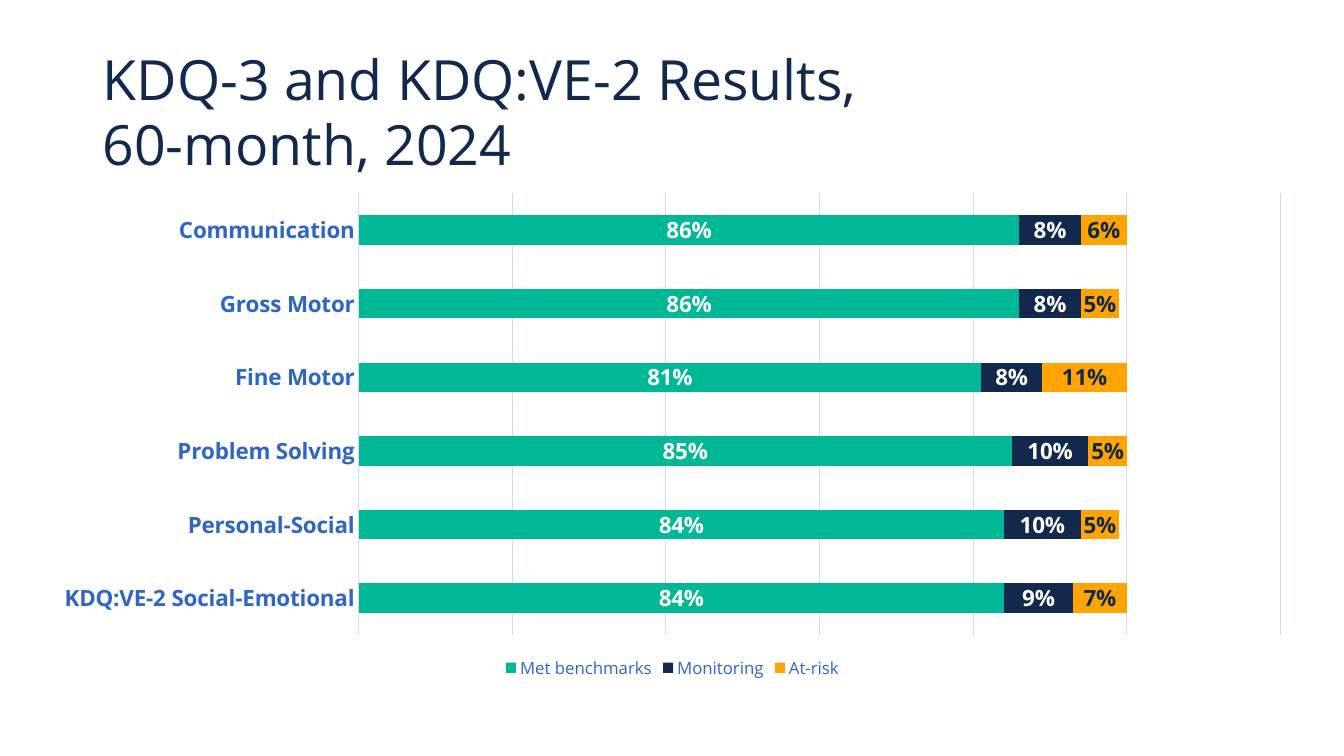
from pptx import Presentation
from pptx.chart import data
from pptx.dml.color import RGBColor
from pptx.enum import chart as ch, text
from pptx.util import Inches, Pt

NAVY = RGBColor(0x12, 0x28, 0x4C)
BLUE = RGBColor(0x2E, 0x66, 0xC2)
PALE = RGBColor(0xCD, 0xDB, 0xF3)
GREEN = RGBColor(0x00, 0xB7, 0x96)
ORANGE = RGBColor(0xFF, 0xA4, 0x00)
WHITE = RGBColor(0xFF, 0xFF, 0xFF)

AREAS = ["KDQ:VE-2 Social-Emotional", "Personal-Social", "Problem Solving",
         "Fine Motor", "Gross Motor", "Communication"]
RESULTS = [  # name, shares by area, bar colour, label colour
    ("Met benchmarks", (0.84, 0.84, 0.85, 0.81, 0.86, 0.86), GREEN, WHITE),
    ("Monitoring", (0.09, 0.10, 0.10, 0.08, 0.08, 0.08), NAVY, WHITE),
    ("At-risk", (0.07, 0.05, 0.05, 0.11, 0.05, 0.06), ORANGE, NAVY),
]


def set_font(font, size, color, bold=False):
    font.name = "Open Sans"
    font.size = Pt(size)
    font.bold = bold
    font.color.rgb = color


prs = Presentation()
prs.slide_width, prs.slide_height = Inches(13.33), Inches(7.5)
s = prs.slides.add_slide(prs.slide_layouts[6])

# Title
tf = s.shapes.add_textbox(Inches(0.92), Inches(0.4), Inches(11.5), Inches(1.45)).text_frame
tf.word_wrap = True
tf.vertical_anchor = text.MSO_ANCHOR.MIDDLE
p = tf.paragraphs[0]
p.line_spacing = 0.98
for i, line in enumerate(["KDQ-3 and KDQ:VE-2 Results, ", "60-month, 2024"]):
    if i:
        p.add_line_break()
    r = p.add_run()
    r.text = line
    set_font(r.font, 39.6, NAVY)

# Stacked bars
cd = data.CategoryChartData(number_format="0%")
cd.categories = AREAS
for name, shares, _, _ in RESULTS:
    cd.add_series(name, shares)
chart = s.shapes.add_chart(ch.XL_CHART_TYPE.BAR_STACKED, Inches(0.39), Inches(1.82),
                           Inches(12.56), Inches(4.96), cd).chart
chart.has_title = False
set_font(chart.font, 10, NAVY)

plot = chart.plots[0]
plot.gap_width, plot.overlap = 150, 100
plot.vary_by_categories = False
for series, (_, _, fill, label) in zip(plot.series, RESULTS):
    series.format.fill.solid()
    series.format.fill.fore_color.rgb = fill
    labels = series.data_labels
    labels.show_value = True
    labels.position = ch.XL_LABEL_POSITION.CENTER
    labels.number_format, labels.number_format_is_linked = "0%", False
    set_font(labels.font, 16, label, bold=True)

# Axes
areas, shares = chart.category_axis, chart.value_axis
areas.major_tick_mark = areas.minor_tick_mark = ch.XL_TICK_MARK.NONE
set_font(areas.tick_labels.font, 16, BLUE, bold=True)
shares.minimum_scale, shares.maximum_scale, shares.major_unit = 0, 1.2, 0.2
shares.has_major_gridlines = True
shares.visible = False
for line in (areas.format.line, shares.major_gridlines.format.line):
    line.color.rgb = PALE
    line.width = Pt(0.75)

# Legend
chart.has_legend = True
chart.legend.position = ch.XL_LEGEND_POSITION.BOTTOM
chart.legend.include_in_layout = False
set_font(chart.legend.font, 12, BLUE)

prs.save("out.pptx")
